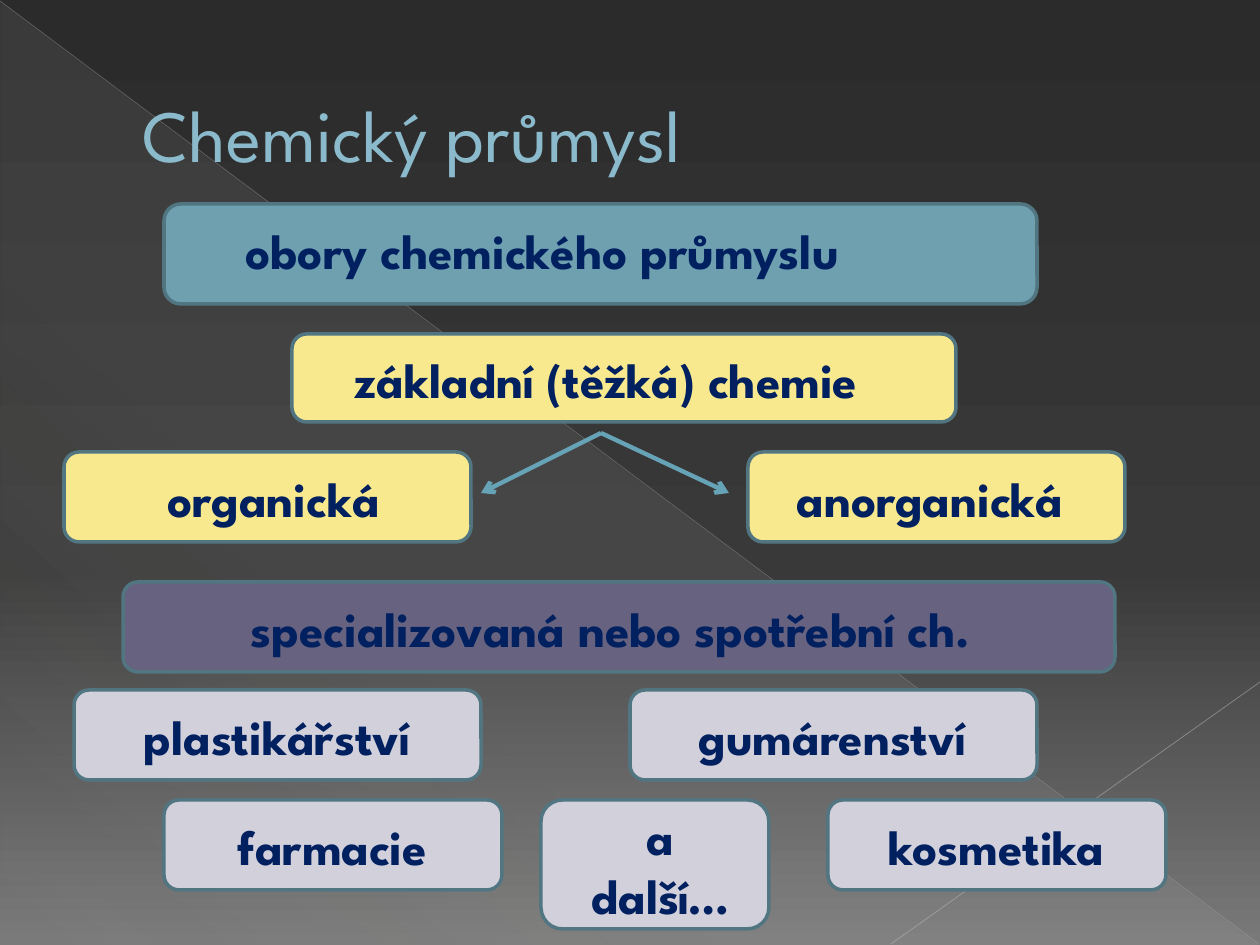
from lxml.etree import SubElement
from pptx import Presentation
from pptx.dml.color import RGBColor
from pptx.enum.shapes import MSO_CONNECTOR, MSO_SHAPE
from pptx.enum.text import MSO_ANCHOR, PP_ALIGN
from pptx.oxml import parse_xml
from pptx.oxml.ns import nsdecls, qn
from pptx.util import Pt

FONT = "League Spartan"
TITLE_BLUE = RGBColor(0x8A, 0xBA, 0xCB)
NAVY = RGBColor(0x00, 0x20, 0x60)
TEAL = RGBColor(0x6E, 0xA0, 0xB0)
YELLOW = RGBColor(0xF9, 0xE9, 0x8E)
PURPLE = RGBColor(0x67, 0x62, 0x7F)
LILAC = RGBColor(0xD1, 0xD0, 0xDB)
BORDER = RGBColor(0x51, 0x76, 0x82)
ARROW = RGBColor(0x67, 0xA3, 0xB7)
RAY = RGBColor(0xB7, 0xB7, 0xB7)
FAINT_RAY = RGBColor(0xBF, 0xBF, 0xBF)

WIDTH, HEIGHT = 1260, 945
TITLE = "Chemický průmysl"

# (position %, colour, opacity %)
BACKGROUND = [(0, "2B2B2B", 100), (60, "393939", 100), (100, "797979", 100)]
SHEEN = [(0, "D4D2D0", 10), (70, "D4D2D0", 8), (100, "D4D2D0", 1)]

# (start, end, colour, width in points, opacity %)
RAYS = [
    ((0, 1), (1259, 944), RAY, 0.39, 35),
    ((1260, 682), (891, 944), FAINT_RAY, 0.47, 45),
]

# (label, fill, card left/top/width/height, label left/top/width/height, label is filled)
CARDS = [
    ("obory chemického průmyslu", TEAL, (164, 204, 873, 100), (233, 214, 717, 72), False),
    ("základní (těžká) chemie", YELLOW, (292, 334, 664, 88), (282, 343, 648, 131), False),
    ("organická", YELLOW, (64, 452, 407, 90), (84, 462, 379, 72), False),
    ("anorganická", YELLOW, (748, 452, 377, 90), (758, 462, 344, 131), False),
    ("specializovaná nebo spotřební ch.", PURPLE, (123, 582, 992, 90), (134, 592, 953, 72), True),
    ("plastikářství", LILAC, (74, 690, 407, 90), (110, 700, 334, 72), True),
    ("gumárenství", LILAC, (630, 690, 407, 90), (665, 700, 334, 72), True),
    ("farmacie", LILAC, (164, 800, 338, 90), (194, 810, 277, 72), False),
    ("a další…", LILAC, (541, 800, 228, 129), (566, 800, 188, 117), False),
    ("kosmetika", LILAC, (828, 800, 338, 90), (858, 810, 277, 72), False),
]
LEFT_ALIGNED = {"obory chemického průmyslu"}

FORK = (601, 433)
BRANCH_ENDS = [(481, 493), (729, 493)]


def px(length):
    return round(length * 914400 / 126)


def gradient(stops, angle):
    marks = "".join(
        f'<a:gs pos="{pos * 1000}"><a:srgbClr val="{colour}">'
        f'<a:alpha val="{opacity * 1000}"/></a:srgbClr></a:gs>'
        for pos, colour, opacity in stops
    )
    return parse_xml(
        f'<a:gradFill {nsdecls("a")} rotWithShape="1"><a:gsLst>{marks}</a:gsLst>'
        f'<a:lin ang="{angle * 60000}" scaled="0"/></a:gradFill>'
    )


def use_gradient(fill, parent, stops, angle):
    """Swap the fill held in parent for a gradient with any number of stops."""
    fill.solid()
    solid = parent.find(qn("a:solidFill"))
    parent.replace(solid, gradient(stops, angle))


def add_text(shapes, text, box, size=28, color=NAVY, bold=True,
             align=PP_ALIGN.CENTER, anchor=MSO_ANCHOR.TOP, indent=0, fill=None):
    label = shapes.add_textbox(*map(px, box))
    if fill is not None:
        label.fill.solid()
        label.fill.fore_color.rgb = fill
    frame = label.text_frame
    frame.word_wrap = True
    frame.vertical_anchor = anchor
    paragraph = frame.paragraphs[0]
    paragraph.alignment = align
    if indent:
        paragraph._p.get_or_add_pPr().set("marL", str(px(indent)))
    run = paragraph.add_run()
    run.text = text
    run.font.name = FONT
    run.font.size = Pt(size)
    run.font.bold = bold
    run.font.color.rgb = color


def add_line(shapes, start, end, color, width, opacity=100, arrow=False):
    line = shapes.add_connector(MSO_CONNECTOR.STRAIGHT, *map(px, start + end))
    line.line.color.rgb = color
    line.line.width = Pt(width)
    properties = line._element.spPr
    SubElement(properties, qn("a:effectLst"))
    outline = properties.find(qn("a:ln"))
    if opacity < 100:
        tint = outline.find(".//" + qn("a:srgbClr"))
        SubElement(tint, qn("a:alpha")).set("val", str(opacity * 1000))
    if arrow:
        SubElement(outline, qn("a:tailEnd")).set("type", "arrow")


def add_card(shapes, label, fill, card_box, label_box, label_filled):
    group = shapes.add_group_shape().shapes
    card = group.add_shape(MSO_SHAPE.ROUNDED_RECTANGLE, *map(px, card_box))
    card.shadow.inherit = False
    card.fill.solid()
    card.fill.fore_color.rgb = fill
    card.line.color.rgb = BORDER
    card.line.width = Pt(2)
    add_text(group, label, label_box, fill=fill if label_filled else None,
             align=PP_ALIGN.LEFT if label in LEFT_ALIGNED else PP_ALIGN.CENTER)


def add_backdrop(slide):
    backdrop = slide.background.fill
    backdrop.solid()
    use_gradient(backdrop, slide._element.cSld.bg.bgPr, BACKGROUND, 90)
    sheen = slide.shapes.add_shape(MSO_SHAPE.RIGHT_TRIANGLE, *map(px, (1, 2, 1258, 943)))
    sheen.shadow.inherit = False
    sheen.line.fill.background()
    use_gradient(sheen.fill, sheen._element.spPr, SHEEN, 133)
    for ray in RAYS:
        add_line(slide.shapes, *ray)


def main():
    presentation = Presentation()
    presentation.slide_width = px(WIDTH)
    presentation.slide_height = px(HEIGHT)
    slide = presentation.slides.add_slide(presentation.slide_layouts[6])

    add_backdrop(slide)
    add_text(slide.shapes, TITLE, (63, 37, 1134, 193), size=42, color=TITLE_BLUE,
             bold=False, align=PP_ALIGN.LEFT, anchor=MSO_ANCHOR.MIDDLE, indent=67)
    for card in CARDS:
        add_card(slide.shapes, *card)
    fork = slide.shapes.add_group_shape().shapes
    for end in BRANCH_ENDS:
        add_line(fork, FORK, end, ARROW, 2.5, arrow=True)

    presentation.save("out.pptx")


if __name__ == "__main__":
    main()
